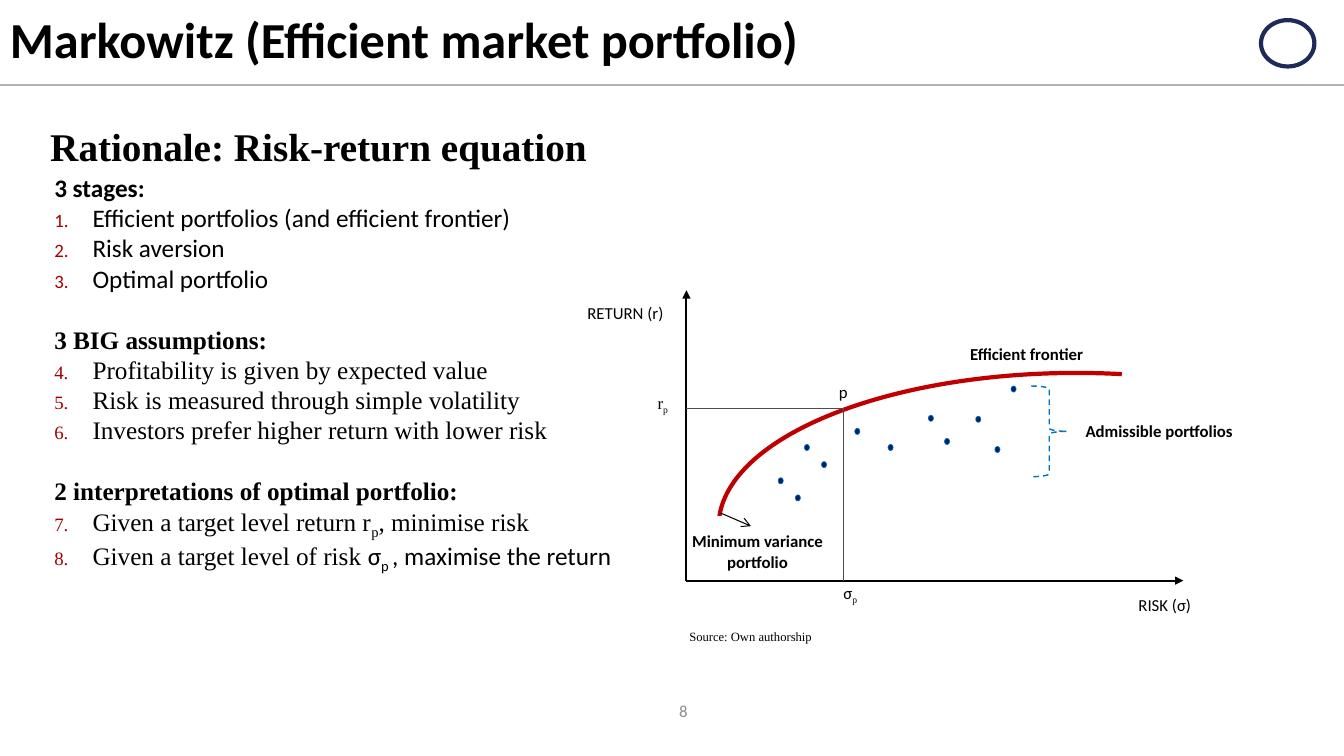
"""Build the slide on Markowitz's efficient market portfolio."""
from dataclasses import dataclass

from lxml import etree
from pptx import Presentation
from pptx.dml.color import RGBColor
from pptx.enum.dml import MSO_LINE
from pptx.enum.shapes import MSO_CONNECTOR, MSO_SHAPE
from pptx.enum.text import MSO_ANCHOR, PP_ALIGN
from pptx.oxml.ns import qn
from pptx.util import Inches, Pt

STRAIGHT = MSO_CONNECTOR.STRAIGHT
OVAL, ARC = MSO_SHAPE.OVAL, MSO_SHAPE.ARC
BRACE, RECTANGLE = MSO_SHAPE.RIGHT_BRACE, MSO_SHAPE.RECTANGLE
TOP, MIDDLE = MSO_ANCHOR.TOP, MSO_ANCHOR.MIDDLE
LEFT, CENTER, RIGHT = PP_ALIGN.LEFT, PP_ALIGN.CENTER, PP_ALIGN.RIGHT
DASH = MSO_LINE.DASH


@dataclass(frozen=True)
class Theme:
    sans: str = "Calibri"
    serif: str = "Times New Roman"
    ink: str = "000000"
    paper: str = "FFFFFF"
    muted: str = "8C8C8C"
    rule: str = "B2B2B2"
    ring: str = "1E2B58"
    number: str = "A40000"
    frontier: str = "C00000"
    dot: str = "002060"
    accent: str = "0070C0"
    guide: str = "4D4D4D"
    title_size: int = 36
    heading_size: int = 28
    list_size: int = 18
    label_size: int = 12
    source_size: int = 9


THEME = Theme()
SANS, SERIF = THEME.sans, THEME.serif
COLUMNS, ROWS = 133.33, 75
CELL = Inches(0.1)

TITLE = "Markowitz (Efficient market portfolio)"
HEADING = "Rationale: Risk-return equation"
PAGE = "8"
SOURCE = "Source: Own authorship"

# (heading, font, items); an item is a list of (text, font, is_subscript) runs
SECTIONS = [
    ("3 stages:", SANS, [
        [("Efficient portfolios (and efficient frontier)", SANS, False)],
        [("Risk aversion", SANS, False)],
        [("Optimal portfolio", SANS, False)],
    ]),
    ("3 BIG assumptions:", SERIF, [
        [("Profitability is given by expected value", SERIF, False)],
        [("Risk is measured through simple volatility", SERIF, False)],
        [("Investors prefer higher return with lower risk", SERIF, False)],
    ]),
    ("2 interpretations of optimal portfolio:", SERIF, [
        [("Given a target level return r", SERIF, False), ("p", SERIF, True),
         (", minimise risk", SERIF, False)],
        [("Given a target level of risk ", SERIF, False), ("σ", SANS, False),
         ("p ", SANS, True), (", maximise the return", SANS, False)],
    ]),
]

LABELS = [
    ((111.3, 58.5, 8.5, 3), False, [("RISK (σ)", SANS, False)]),
    ((56.2, 29.5, 11.7, 3), False, [("RETURN (r)", SANS, False)]),
    ((94, 33.6, 15.7, 3), True, [("Efficient frontier", SANS, False)]),
    ((103.5, 41.2, 23, 3), True, [("Admissible portfolios", SANS, False)]),
    ((66.7, 52.2, 16.9, 5), True, [("Minimum variance portfolio", SANS, False)]),
    ((59.9, 38.5, 11.7, 3), False, [("r", SERIF, False), ("p", SERIF, True)]),
    ((78.5, 57.3, 11.7, 3), False, [("σ", SANS, False), ("p", SERIF, True)]),
    ((77.8, 37.4, 11.7, 3), False, [("p", SANS, False)]),
]

ORIGIN_X, ORIGIN_Y = 68.1, 57.6
RISK_END, RETURN_END = 117.4, 28.8
TARGET_RISK, TARGET_RETURN = 83.7, 40.5
PORTFOLIOS = [
    (79.8, 44.1), (81.5, 45.8), (77.2, 47.4), (84.8, 42.5), (88.1, 44.1), (92.1, 41.2),
    (93.7, 43.5), (96.8, 41.3), (98.7, 44.3), (100.3, 38.3), (78.9, 49.1),
]
DOT_WIDTH, DOT_HEIGHT = 0.5, 0.6


def cells(*lengths):
    return [round(length * CELL) for length in lengths]


def add_line(slide, start, end, color, width, head=None):
    line = slide.shapes.add_connector(STRAIGHT, *cells(*start, *end))
    line.line.color.rgb = RGBColor.from_string(color)
    line.line.width = Pt(width)
    if head:
        etree.SubElement(line.line._get_or_add_ln(), qn("a:tailEnd"), type=head)
    etree.SubElement(line._element.spPr, qn("a:effectLst"))


def add_figure(slide, preset, area, color, width, fill=None):
    figure = slide.shapes.add_shape(preset, *cells(*area))
    figure.shadow.inherit = False
    figure.line.color.rgb = RGBColor.from_string(color)
    figure.line.width = Pt(width)
    if fill:
        figure.fill.solid()
        figure.fill.fore_color.rgb = RGBColor.from_string(fill)
    else:
        figure.fill.background()
    return figure


def add_frame(slide, area, anchor=TOP):
    frame = slide.shapes.add_textbox(*cells(*area)).text_frame
    frame.word_wrap = True
    frame.vertical_anchor = anchor
    return frame


def add_runs(paragraph, runs, size, bold=False, color=THEME.ink):
    for text, face, subscript in runs:
        run = paragraph.add_run()
        run.text = text
        run.font.name = face
        run.font.size = Pt(size)
        run.font.bold = bold
        run.font.color.rgb = RGBColor.from_string(color)
        if subscript:
            run.font._element.set("baseline", "-25000")


def add_text(slide, area, runs, size, bold=False, align=LEFT, anchor=TOP,
             color=THEME.ink, spacing=1.0):
    paragraph = add_frame(slide, area, anchor).paragraphs[0]
    paragraph.alignment = align
    paragraph.line_spacing = spacing
    add_runs(paragraph, runs, size, bold, color)


def number_paragraph(paragraph, first):
    properties = paragraph._p.get_or_add_pPr()
    indent = Inches(0.38)
    properties.set("marL", str(indent))
    properties.set("indent", str(-indent))
    bullet_color = etree.SubElement(properties, qn("a:buClr"))
    etree.SubElement(bullet_color, qn("a:srgbClr"), val=THEME.number)
    etree.SubElement(properties, qn("a:buSzPct"), val="75000")
    etree.SubElement(properties, qn("a:buFont"), typeface=SANS)
    etree.SubElement(properties, qn("a:buAutoNum"), type="arabicPeriod", startAt=str(first))


def add_sections(slide):
    frame = add_frame(slide, (4.4, 16.6, 59.7, 46.4))
    first = 1
    for heading, face, items in SECTIONS:
        opening = first == 1
        paragraph = frame.paragraphs[0] if opening else frame.add_paragraph()
        if not opening:
            paragraph.space_before = Pt(22)
        add_runs(paragraph, [(heading, face, False)], THEME.list_size, bold=True)
        for runs in items:
            paragraph = frame.add_paragraph()
            number_paragraph(paragraph, first)
            add_runs(paragraph, runs, THEME.list_size)
        first += len(items)


def add_frontier_plot(slide):
    add_line(slide, (ORIGIN_X, ORIGIN_Y), (RISK_END, ORIGIN_Y), THEME.ink, 1.5, "triangle")
    frontier = add_figure(slide, ARC, (71.3, 37, 71, 30.4), THEME.frontier, 3)
    frontier.adjustments[0], frontier.adjustments[1] = 152.04, 1.01
    frontier._element.spPr.find(qn("a:xfrm")).set("flipH", "1")
    for left, top in PORTFOLIOS:
        add_figure(slide, OVAL, (left, top, DOT_WIDTH, DOT_HEIGHT), THEME.accent, 0.5, THEME.dot)
    brace = add_figure(slide, BRACE, (102.3, 38.3, 3.6, 9), THEME.accent, 1)
    brace.line.dash_style = DASH
    add_line(slide, (ORIGIN_X, ORIGIN_Y), (ORIGIN_X, RETURN_END), THEME.ink, 1.5, "triangle")
    add_figure(slide, RECTANGLE, (69.9, 51.2, 10.5, 3.4), THEME.paper, 0.5, THEME.paper)
    add_line(slide, (71.5, 50.9), (74.5, 52.2), THEME.ink, 0.75, "arrow")
    target = (TARGET_RISK, TARGET_RETURN)
    add_line(slide, (ORIGIN_X, TARGET_RETURN), target, THEME.guide, 0.5)
    add_line(slide, (TARGET_RISK, ORIGIN_Y), target, THEME.guide, 0.5)
    for area, bold, runs in LABELS:
        add_text(slide, area, runs, THEME.label_size, bold, CENTER)


def main():
    deck = Presentation()
    deck.slide_width, deck.slide_height = cells(COLUMNS, ROWS)
    slide = deck.slides.add_slide(deck.slide_layouts[6])
    add_line(slide, (0, 8.4), (COLUMNS, 8.4), THEME.rule, 1.5)
    add_text(slide, (0, 0, COLUMNS, 8.3), [(TITLE, SANS, False)], THEME.title_size, True,
             anchor=MIDDLE, spacing=0.9)
    add_text(slide, (64, 68.5, 5.2, 4), [(PAGE, SANS, False)], THEME.label_size,
             align=RIGHT, anchor=MIDDLE, color=THEME.muted)
    add_figure(slide, OVAL, (125.1, 2, 5.3, 4.6), THEME.ring, 3)
    add_text(slide, (4, 12.2, 125.1, 5.6), [(HEADING, SERIF, False)], THEME.heading_size, True,
             spacing=0.9)
    add_sections(slide)
    add_text(slide, (55, 61.9, 38.9, 2.5), [(SOURCE, SERIF, False)], THEME.source_size,
             align=CENTER, anchor=MIDDLE)
    add_frontier_plot(slide)
    deck.save("out.pptx")


if __name__ == "__main__":
    main()
